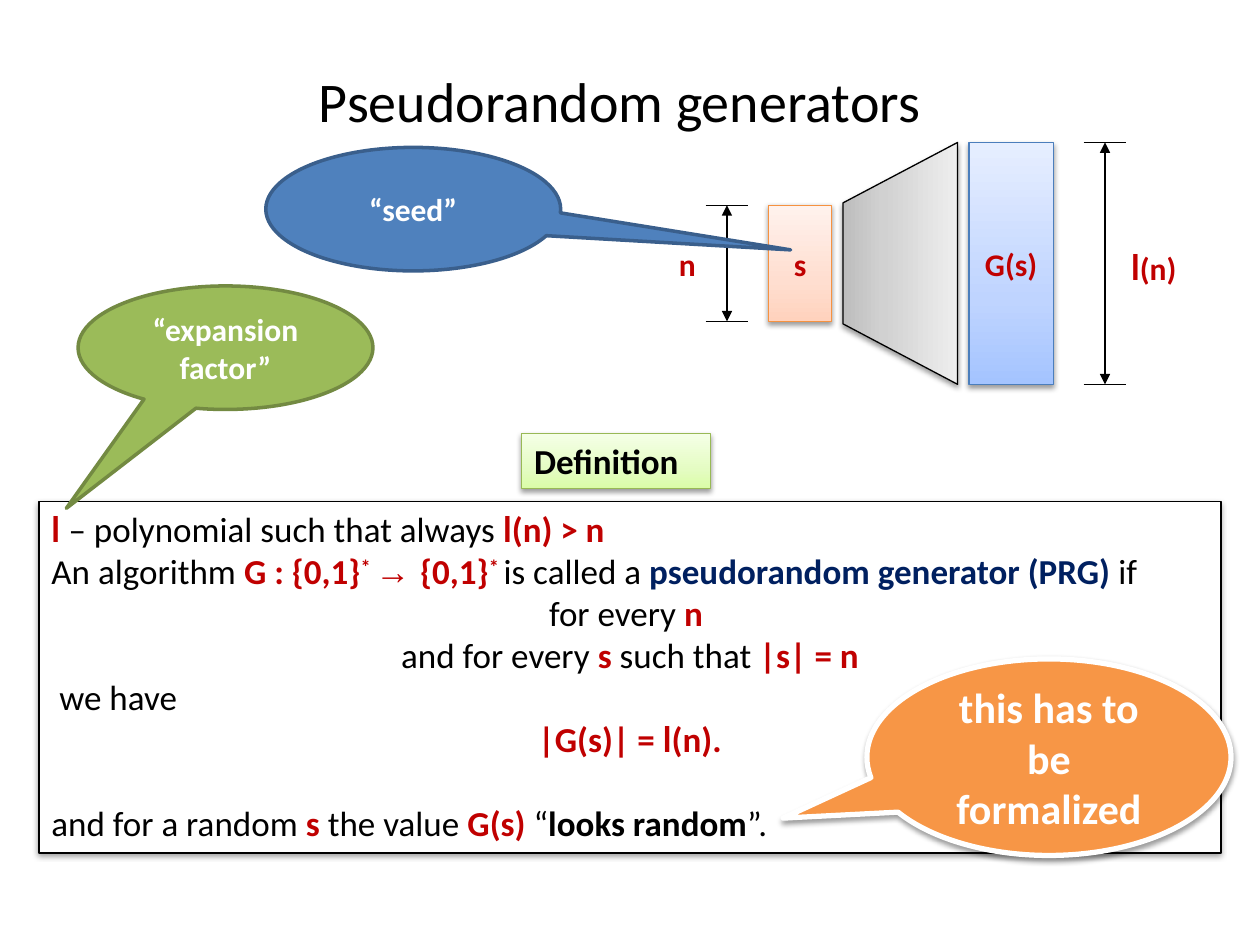
from lxml import etree
from pptx import Presentation
from pptx import util as u
from pptx.dml.color import RGBColor
from pptx.enum import shapes, text
from pptx.oxml.ns import qn

COLORS = {
    "black": "000000", "white": "FFFFFF", "red": "C00000", "navy": "002060",
    "green": "9BBB59", "green_edge": "738A42", "blue": "4F81BD", "blue_edge": "3A5F8C",
    "orange": "F79646", "seed_edge": "F69240", "output_edge": "4B7EBC", "tag_edge": "98B955",
}
GRADIENTS = {
    "seed": ("FFD2BD", "FFDED0", "FFF2ED"),
    "output": ("A4C4FF", "BFD4FF", "E6EEFF"),
    "funnel": ("BDBDBD", "D1D1D1", "EEEEEE"),
    "tag": ("DAFDA7", "E4FCC2", "F5FFE7"),
}
LEFT, CENTER = text.PP_ALIGN.LEFT, text.PP_ALIGN.CENTER
TOP, MIDDLE = text.MSO_ANCHOR.TOP, text.MSO_ANCHOR.MIDDLE
RECT = shapes.MSO_SHAPE.RECTANGLE

prs = Presentation()
prs.slide_width, prs.slide_height = u.Inches(10), u.Inches(7.5)
COL, ROW = prs.slide_width / 100, prs.slide_height / 100  # 100 x 100 grid


def place(box):
    """Turn a box in columns and rows into slide lengths."""
    x, y, w, h = box
    return round(x * COL), round(y * ROW), round(w * COL), round(h * ROW)


def rgb(name):
    return RGBColor.from_string(COLORS[name])


def put_text(sp, paras, size=18, color="black", bold=False, align=LEFT, anchor=TOP, wrap=True):
    """Each paragraph is a string, or a list of strings and (string, format) runs."""
    tf = sp.text_frame
    tf.word_wrap, tf.vertical_anchor = wrap, anchor
    for i, runs in enumerate(paras):
        p = tf.paragraphs[0] if i == 0 else tf.add_paragraph()
        p.alignment = align
        for run in [runs] if isinstance(runs, str) else runs:
            words, fmt = (run, {}) if isinstance(run, str) else run
            r = p.add_run()
            r.text = words
            r.font.name = fmt.get("font", "Calibri")
            r.font.size = u.Pt(fmt.get("size", size))
            r.font.bold = fmt.get("bold", bold)
            r.font.color.rgb = rgb(fmt.get("color", color))
            if "raised" in fmt:
                r.font._element.set("baseline", str(fmt["raised"] * 1000))
    return tf


def style(sp, fill, edge, width=0.75, angle=270, shadow=True):
    """Fill with a gradient or a plain colour, then outline and shadow."""
    spPr = sp._element.spPr
    if fill in GRADIENTS:
        sp.fill.gradient()
        grad = spPr.find(qn("a:gradFill"))
        stops = grad.find(qn("a:gsLst"))
        for gs in list(stops):
            stops.remove(gs)
        for pos, color in zip((0, 35, 100), GRADIENTS[fill]):
            gs = etree.SubElement(stops, qn("a:gs"), pos=str(pos * 1000))
            etree.SubElement(gs, qn("a:srgbClr"), val=color)
        grad.find(qn("a:lin")).set("ang", str(angle * 60000))
    else:
        sp.fill.solid()
        sp.fill.fore_color.rgb = rgb(fill)
    sp.line.color.rgb, sp.line.width = rgb(edge), u.Pt(width)
    sp.shadow.inherit = False
    if shadow:
        outer = etree.SubElement(
            spPr.find(qn("a:effectLst")), qn("a:outerShdw"), blurRad=str(u.Pt(3.1)),
            dist=str(u.Pt(1.6)), dir="5400000", rotWithShape="0")
        clr = etree.SubElement(outer, qn("a:srgbClr"), val=COLORS["black"])
        etree.SubElement(clr, qn("a:alpha"), val="38000")
    return sp


def add_box(s, box, fill, edge):
    return style(s.shapes.add_shape(RECT, *place(box)), fill, edge)


def add_line(s, x1, y1, x2, y2, arrows=False):
    x, y, w, h = place((x1, y1, x2 - x1, y2 - y1))
    cx = s.shapes.add_connector(shapes.MSO_CONNECTOR.STRAIGHT, x, y, x + w, y + h)
    cx.line.color.rgb, cx.line.width = rgb("black"), u.Pt(0.75)
    if arrows:
        ln = cx._element.spPr.find(qn("a:ln"))
        for end in ("a:headEnd", "a:tailEnd"):
            etree.SubElement(ln, qn(end), type="triangle")
    etree.SubElement(cx._element.spPr, qn("a:effectLst"))


def add_dimension(s, box):
    """Double arrow between two ticks, as wide as the box."""
    x, y, w, h = box
    add_line(s, x + w / 2, y, x + w / 2, y + h, arrows=True)
    for tick in (y, y + h):
        add_line(s, x, tick, x + w, tick)


def add_title(s, box):
    title = s.shapes.title
    title.left, title.top, title.width, title.height = place(box)
    put_text(title, ["Pseudorandom generators"], size=32, align=CENTER, anchor=MIDDLE)


def add_diagram(s, box):
    """Seed, funnel and output, with their lengths on either side."""
    x, y, w, h = box
    seed_y, seed_h = y + 0.26 * h, 0.48 * h
    bar = dict(color="red", bold=True, align=CENTER, anchor=MIDDLE, wrap=False)
    put_text(add_box(s, (x + 8.1, seed_y, 5, seed_h), "seed", "seed_edge"), ["s"], **bar)
    put_text(add_box(s, (x + 24, y, 6.7, h), "output", "output_edge"), ["G(s)"], **bar)

    # Funnel widening from seed to output
    near, far = x + 14, x + 23.1
    points = [(far, y), (near, y + h / 4), (near, y + 3 * h / 4), (far, y + h)]
    points = [(round(px * COL), round(py * ROW)) for px, py in points]
    fb = s.shapes.build_freeform(*points[0])
    fb.add_line_segments(points[1:], close=True)
    style(fb.convert_to_shape(), "funnel", "black", angle=0)

    # Lengths
    add_dimension(s, (x + 3.1, seed_y, 3.4, seed_h))
    add_dimension(s, (x + 33.1, y, 3.4, h))
    long_n = [("l", dict(font="Lato", size=20)), "(n)"]
    for dx, width, label in ((0, 3.4, "n"), (w - 5.7, 5.7, long_n)):
        tb = s.shapes.add_textbox(*place((x + dx, y + 0.4 * h, width, 0.21 * h)))
        put_text(tb, [label], color="red", bold=True, wrap=False)


def add_definition(s, box):
    """Framed definition with its tag above the frame."""
    x, y, w, h = box
    red = dict(color="red", bold=True)
    lato, sup = dict(red, font="Lato"), dict(red, raised=30)
    tf = put_text(add_box(s, box, "white", "black"), [
        [("l ", lato), "– polynomial such that always ", ("l", lato), ("(n) > n", red)],
        ["An algorithm ", ("G : {0,1}", red), ("* ", sup), ("→ ", dict(red, font="Arial")),
         ("{0,1}", red), ("* ", sup), "is called a ",
         ("pseudorandom generator (PRG) ", dict(color="navy", bold=True)), "if"],
        ["for every ", ("n ", red)],
        ["and for every ", ("s", red), " such that ", ("|s| = n", red)],
        " we have",
        [("|G(s)| = ", red), ("l", lato), ("(n).", red)],
        ["and for a random ", ("s", red), " the value ", ("G(s)", red), " “",
         ("looks random", dict(bold=True)), "”."],
    ], size=20)
    for i in (2, 3, 5):
        tf.paragraphs[i].alignment = CENTER
    tf.paragraphs[-1].space_before = u.Pt(24)

    tag = add_box(s, (x + 38.3, y - 7.2, 15, 5.87), "tag", "tag_edge")
    put_text(tag, ["Definition"], size=20, bold=True, wrap=False)


def add_callout(s, box, tip, paras, fill, edge, width=2, size=18, shadow=False):
    sp = s.shapes.add_shape(shapes.MSO_SHAPE.OVAL_CALLOUT, *place(box))
    for i, share in enumerate(tip):
        sp.adjustments[i] = share
    style(sp, fill, edge, width, shadow=shadow)
    put_text(sp, paras, size=size, color="white", bold=True, align=CENTER, anchor=MIDDLE)


def main():
    s = prs.slides.add_slide(prs.slide_layouts[5])
    add_title(s, (4.2, 2.27, 90, 16.67))
    add_diagram(s, (52.9, 15.07, 41.6, 25.6))
    add_definition(s, (3.1, 53.07, 93.8, 37.2))
    add_callout(s, (6.2, 30.27, 23.4, 13.07), (-0.54, 1.3),
                ["“expansion", "factor”"], "green", "green_edge")
    add_callout(s, (68.8, 69.73, 28.9, 20.8), (-0.73, 0.31), ["this has to be formalized"],
                "orange", "white", width=3, size=24, shadow=True)
    add_callout(s, (21.1, 15.6, 23.4, 13.07), (1.28, 0.33), ["“seed”"], "blue", "blue_edge")
    prs.save("out.pptx")


if __name__ == "__main__":
    main()
